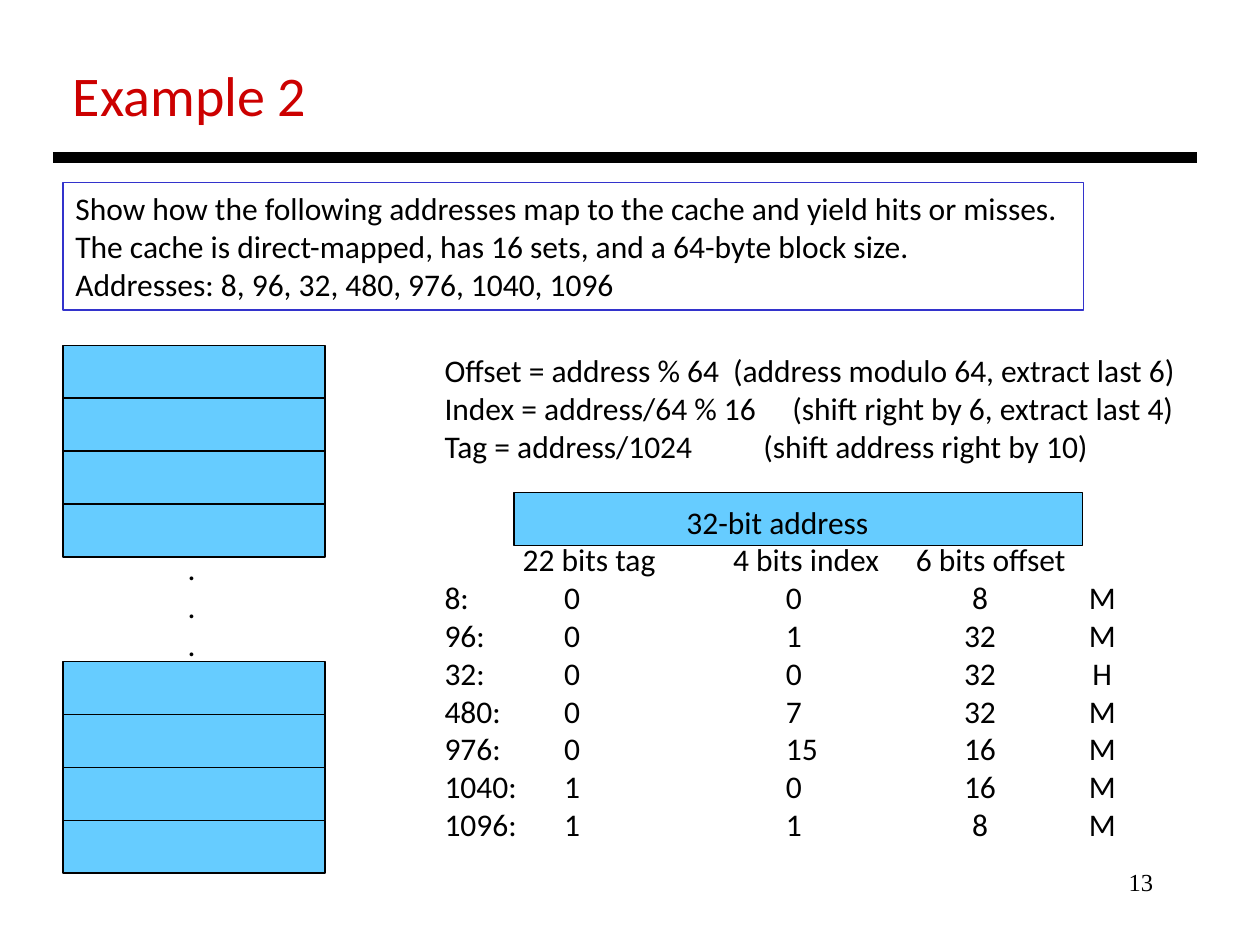
from lxml import etree
from pptx import Presentation
from pptx import util as u
from pptx.dml.color import RGBColor
from pptx.enum import shapes, text
from pptx.oxml import ns

COLORS = {
    "ink": "000000",
    "title": "CC0000",
    "block": "66CCFF",
    "frame": "3333CC",
}
PROBLEM = [
    "Show how the following addresses map to the cache and yield hits or misses.",
    "The cache is direct-mapped, has 16 sets, and a 64-byte block size.",
    "Addresses: 8, 96, 32, 480, 976, 1040, 1096",
]
FORMULAS = [
    ("Offset = address % 64", "(address modulo 64, extract last 6)", 2.29),
    ("Index = address/64 % 16", "(shift right by 6, extract last 4)", 2.76),
    ("Tag = address/1024", "(shift address right by 10)", 2.53),
]
FIELDS = ["22 bits tag", "4 bits index", "6 bits offset"]
LOOKUPS = [
    (8, 0, 0, 8, "M"),
    (96, 0, 1, 32, "M"),
    (32, 0, 0, 32, "H"),
    (480, 0, 7, 32, "M"),
    (976, 0, 15, 16, "M"),
    (1040, 1, 0, 16, "M"),
    (1096, 1, 1, 8, "M"),
]
FIELD_TABS = [(0.62, "l"), (2.29, "l"), (3.74, "l")]
LOOKUP_TABS = [(0.95, "l"), (2.71, "l"), (4.25, "ctr"), (5.22, "ctr")]


def color(name):
    return RGBColor.from_string(COLORS[name])


def add_text(slide, box, lines, size=18, ink="ink", font="Calibri"):
    label = slide.shapes.add_textbox(*map(u.Inches, box))
    frame = label.text_frame
    frame.word_wrap = True
    frame.text = "\n".join(lines)
    for paragraph in frame.paragraphs:
        for run in paragraph.runs:
            run.font.size = u.Pt(size)
            run.font.name = font
            run.font.color.rgb = color(ink)
    return label


def set_tabs(paragraph, stops):
    tab_list = etree.SubElement(paragraph._p.get_or_add_pPr(), ns.qn("a:tabLst"))
    for position, alignment in stops:
        etree.SubElement(tab_list, ns.qn("a:tab"),
                         pos=str(u.Inches(position)), algn=alignment)


def add_block(slide, left, top, width):
    block = slide.shapes.add_shape(
        shapes.MSO_SHAPE.RECTANGLE, *map(u.Inches, (left, top, width, 0.42)))
    block.shadow.inherit = False
    block.fill.solid()
    block.fill.fore_color.rgb = color("block")
    block.line.color.rgb = color("ink")
    block.line.width = u.Pt(0.75)


def add_title_rule(slide):
    rule = slide.shapes.add_connector(
        shapes.MSO_CONNECTOR.STRAIGHT, *map(u.Inches, (0.42, 1.25, 9.5, 1.25)))
    rule.line.color.rgb = color("ink")
    rule.line.width = u.Pt(6)
    etree.SubElement(rule._element.spPr, ns.qn("a:effectLst"))


def add_problem(slide):
    problem = add_text(slide, (0.5, 1.45, 8.1, 1.01), PROBLEM)
    problem.line.color.rgb = color("frame")
    problem.line.width = u.Pt(0.75)


def add_cache(slide):
    for stack_top in (2.74, 5.25):
        for row in range(4):
            add_block(slide, 0.5, stack_top + row * 0.42, 2.08)
    add_text(slide, (1.39, 4.31, 0.27, 1.01), ["."] * 3)


def add_breakdown(slide):
    rows = [(f"{formula}\t{note}", [(stop, "l")])
            for formula, note, stop in FORMULAS]
    rows.append(("\t32-bit address", [(1.92, "l")]))
    rows.append(("\t" + "\t".join(FIELDS), FIELD_TABS))
    for address, *results in LOOKUPS:
        rows.append(("\t".join([f"{address}:", *map(str, results)]), LOOKUP_TABS))

    add_block(slide, 4.08, 3.91, 4.51)
    breakdown = add_text(slide, (3.43, 2.74, 6.07, 4.04), [line for line, _ in rows])
    paragraphs = breakdown.text_frame.paragraphs
    paragraphs[len(FORMULAS)].space_before = u.Pt(21.6)
    for paragraph, (_, stops) in zip(paragraphs, rows):
        set_tabs(paragraph, stops)


def main():
    deck = Presentation()
    deck.slide_width, deck.slide_height = u.Inches(10), u.Inches(7.5)
    slide = deck.slides.add_slide(deck.slide_layouts[6])

    page = add_text(slide, (7.17, 6.83, 2.08, 0.5), ["13"], 14, font="Times New Roman")
    page.text_frame.paragraphs[0].alignment = text.PP_ALIGN.RIGHT
    add_text(slide, (0.48, 0.43, 2.2, 0.64), ["Example 2"], 32, "title")
    add_title_rule(slide)
    add_cache(slide)
    add_breakdown(slide)
    add_problem(slide)
    deck.save("out.pptx")


if __name__ == "__main__":
    main()
